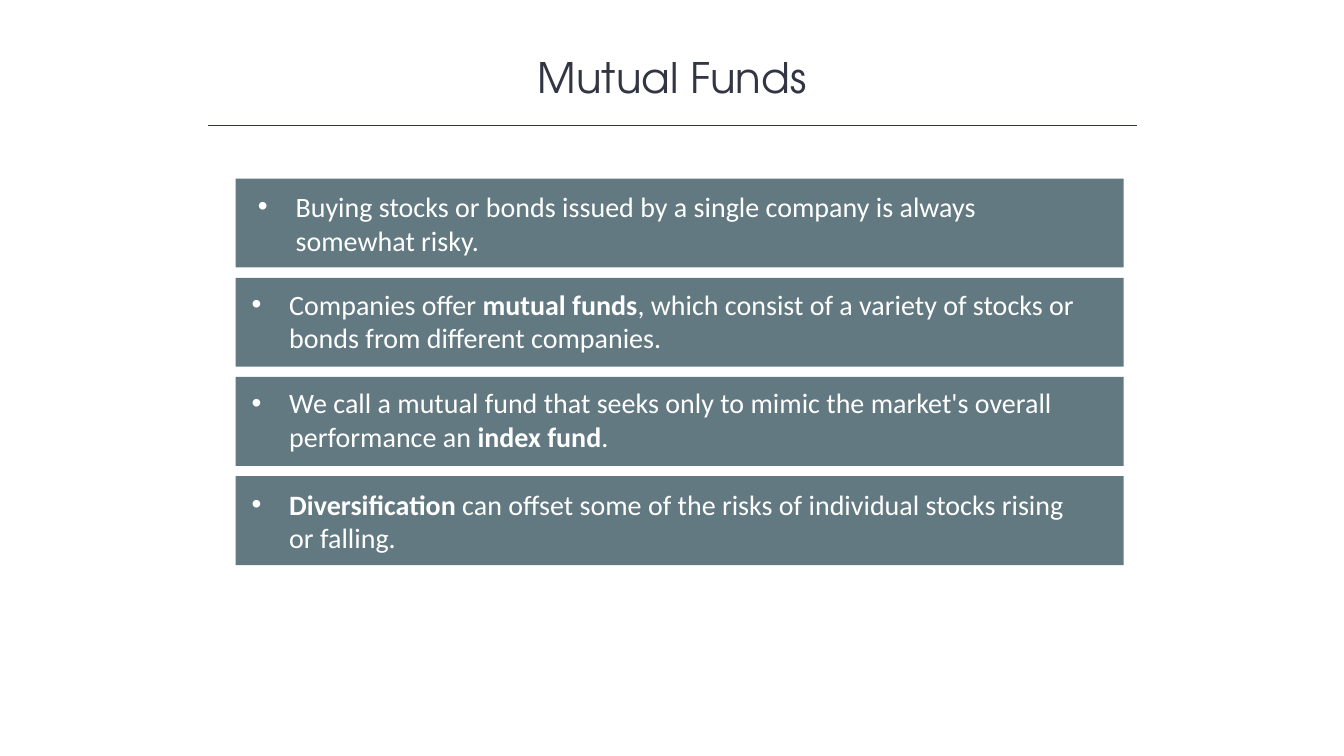
import dataclasses

import lxml.etree
import pptx
import pptx.dml.color
import pptx.enum.shapes
import pptx.enum.text
import pptx.oxml.ns
import pptx.shapes.autoshape
import pptx.slide
import pptx.text.text
import pptx.util

Cm = pptx.util.Cm
Pt = pptx.util.Pt
INK = pptx.dml.color.RGBColor(0x32, 0x35, 0x42)
SLATE = pptx.dml.color.RGBColor(0x62, 0x79, 0x81)
WHITE = pptx.dml.color.RGBColor(0xFF, 0xFF, 0xFF)

LEFT, TOP, WIDTH, HEIGHT = 5.94, 4.5, 22.38, 2.24
PITCH = 2.5
INDENT = 0.95


@dataclasses.dataclass(frozen=True)
class Run:
    text: str
    bold: bool = False


@dataclasses.dataclass(frozen=True)
class Card:
    """One point; dx and dy place its text within the panel, in cm."""
    dx: float
    dy: float
    runs: tuple[Run, ...]


CARDS = (
    Card(0.31, 0.15, (
        Run("Buying stocks or bonds issued by a single company is always "
            "somewhat risky."),
    )),
    Card(0.15, 0.11, (
        Run("Companies offer "),
        Run("mutual funds", True),
        Run(", which consist of a variety of stocks or bonds from "
            "different companies."),
    )),
    Card(0.15, 0.1, (
        Run("We call a mutual fund that seeks only to mimic the market's "
            "overall performance an "),
        Run("index fund", True),
        Run("."),
    )),
    Card(0.15, 0.15, (
        Run("Diversification", True),
        Run(" can offset some of the risks of individual stocks rising "
            "or falling."),
    )),
)


def add_run(para: pptx.text.text._Paragraph, item: Run, face: str,
            size: float, color: pptx.dml.color.RGBColor) -> None:
    run = para.add_run()
    run.text = item.text
    run.font.name = face
    run.font.size = Pt(size)
    run.font.bold = item.bold
    run.font.color.rgb = color


def add_bullet(para: pptx.text.text._Paragraph) -> None:
    props = para._p.get_or_add_pPr()
    props.set("marL", str(Cm(INDENT)))
    props.set("indent", str(-Cm(INDENT)))
    qn = pptx.oxml.ns.qn
    lxml.etree.SubElement(props, qn("a:buFont"), typeface="Arial")
    lxml.etree.SubElement(props, qn("a:buChar"), char="•")


def add_rect(group: pptx.shapes.autoshape.Shape, left: float, top: float,
             width: float, height: float) -> pptx.shapes.autoshape.Shape:
    rect = group.shapes.add_shape(
        pptx.enum.shapes.MSO_SHAPE.RECTANGLE,
        Cm(left), Cm(top), Cm(width), Cm(height))
    rect.shadow.inherit = False
    rect.fill.solid()
    rect.fill.fore_color.rgb = SLATE
    rect.line.fill.background()
    return rect


def add_card(slide: pptx.slide.Slide, card: Card, top: float) -> None:
    group = slide.shapes.add_group_shape()
    add_rect(group, LEFT, top, WIDTH, HEIGHT)
    label = add_rect(group, LEFT + card.dx, top + card.dy, 21.69, 1.96)
    frame = label.text_frame
    frame.word_wrap = True
    frame.vertical_anchor = pptx.enum.text.MSO_ANCHOR.TOP
    para = frame.paragraphs[0]
    para.alignment = pptx.enum.text.PP_ALIGN.LEFT
    add_bullet(para)
    for item in card.runs:
        add_run(para, item, "Calibri", 20, WHITE)


def add_title(slide: pptx.slide.Slide) -> None:
    box = slide.shapes.add_textbox(Cm(4.24), Cm(1.17), Cm(25.4), Cm(1.55))
    frame = box.text_frame
    frame.word_wrap = True
    frame.vertical_anchor = pptx.enum.text.MSO_ANCHOR.MIDDLE
    para = frame.paragraphs[0]
    para.alignment = pptx.enum.text.PP_ALIGN.CENTER
    add_run(para, Run("Mutual Funds"), "TeX Gyre Adventor", 30, INK)


def add_rule(slide: pptx.slide.Slide) -> None:
    """Draw the line under the title."""
    rule = slide.shapes.add_connector(
        pptx.enum.shapes.MSO_CONNECTOR.STRAIGHT,
        Cm(5.23), Cm(3.16), Cm(28.65), Cm(3.16))
    rule.line.color.rgb = INK
    rule.line.width = Pt(1)
    lxml.etree.SubElement(rule._element.spPr,
                          pptx.oxml.ns.qn("a:effectLst"))


def main() -> None:
    deck = pptx.Presentation()
    deck.slide_width = Cm(33.87)
    deck.slide_height = Cm(19.05)
    slide = deck.slides.add_slide(deck.slide_layouts[6])
    add_title(slide)
    add_rule(slide)
    for row, card in enumerate(CARDS):
        add_card(slide, card, TOP + row * PITCH)
    deck.save("out.pptx")


if __name__ == "__main__":
    main()
